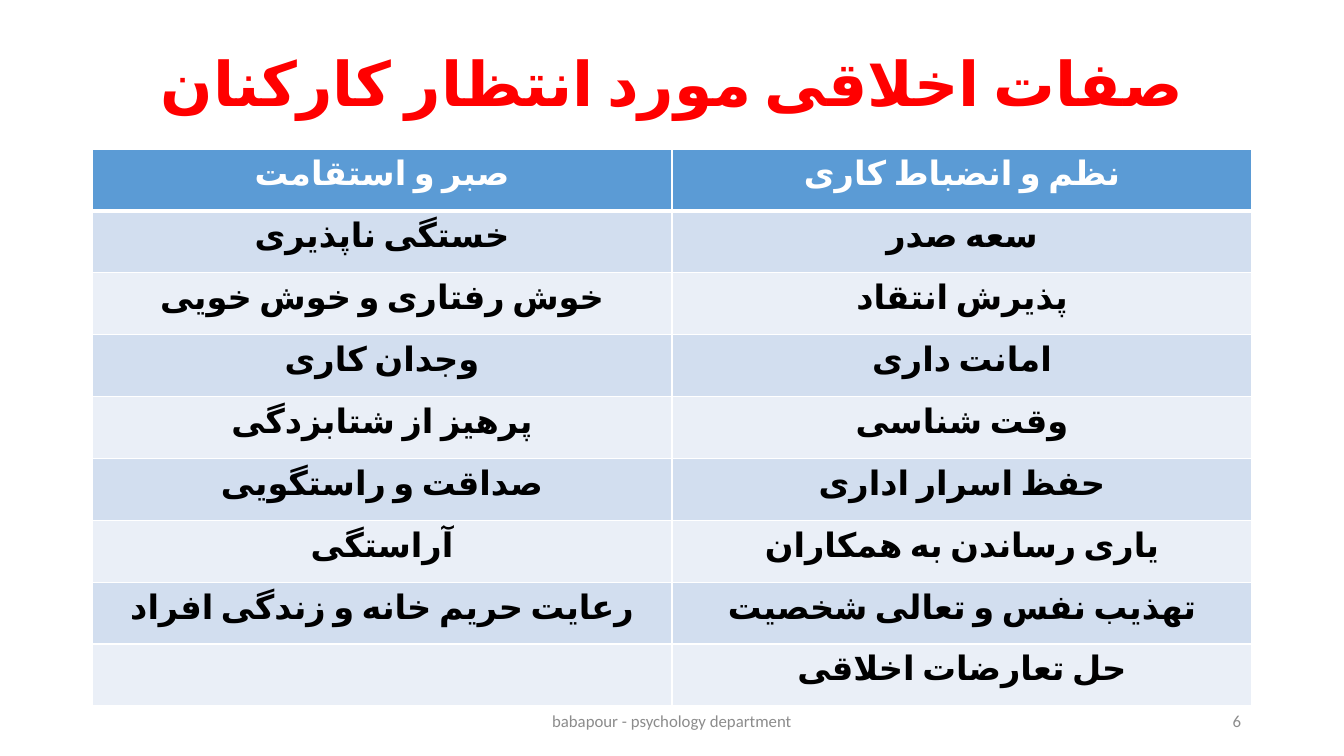
from lxml import etree
from pptx import Presentation
from pptx.dml.color import RGBColor
from pptx.enum.lang import MSO_LANGUAGE_ID
from pptx.enum.text import MSO_ANCHOR, PP_ALIGN
from pptx.oxml.ns import qn
from pptx.util import Pt

MIDDLE = MSO_ANCHOR.MIDDLE
CENTER, RIGHT = PP_ALIGN.CENTER, PP_ALIGN.RIGHT
FARSI, ENGLISH = MSO_LANGUAGE_ID.FARSI, MSO_LANGUAGE_ID.ENGLISH_US
SCALE = 914400 / 100.8  # EMU in one px

THEME = {
    "font": "Calibri",
    "head": "5B9BD5",
    "bands": ("D2DEEF", "EAEFF7"),
    "rule": "FFFFFF",
    "title": {"size": 44, "bold": True, "color": "FF0000", "lang": FARSI},
    "label": {"size": 24, "bold": True, "color": "FFFFFF", "lang": FARSI},
    "body": {"size": 24, "bold": True, "color": "000000", "lang": FARSI},
    "foot": {"size": 12, "bold": False, "color": "8C8C8C", "lang": ENGLISH},
}


def px(*nums):
    return [round(num * SCALE) for num in nums]


def write(frame, text, style, align=CENTER):
    para = frame.paragraphs[0]
    para.alignment = align
    run = para.add_run()
    run.text = text
    look = THEME[style]
    form = {
        "name": THEME["font"],
        "size": Pt(look["size"]),
        "bold": look["bold"],
        "language_id": look["lang"],
    }
    for key, val in form.items():
        setattr(run.font, key, val)
    run.font.color.rgb = RGBColor.from_string(look["color"])
    # Same typeface for the Persian script
    etree.SubElement(run._r.get_or_add_rPr(), qn("a:cs"), typeface=THEME["font"])
    return para


deck = Presentation()
deck.slide_width, deck.slide_height = px(1344, 756)
slide = deck.slides.add_slide(deck.slide_layouts[6])

# Title and footer
texts = [
    ("صفات اخلاقی مورد انتظار کارکنان", "title", CENTER, (93, 40, 1159, 93), 0.9),
    ("babapour - psychology department", "foot", CENTER, (445, 701, 454, 40), 1.0),
    ("6", "foot", RIGHT, (949, 701, 302, 40), 1.0),
]
for text, style, align, place, gap in texts:
    frame = slide.shapes.add_textbox(*px(*place)).text_frame
    frame.word_wrap = True
    frame.vertical_anchor = MIDDLE
    write(frame, text, style, align).line_spacing = gap

# Table of traits
traits = [
    ("صبر و استقامت", "نظم و انضباط کاری"),
    ("خستگی ناپذیری", "سعه صدر"),
    ("خوش رفتاری و خوش خویی", "پذیرش انتقاد"),
    ("وجدان کاری", "امانت داری"),
    ("پرهیز از شتابزدگی", "وقت شناسی"),
    ("صداقت و راستگویی", "حفظ اسرار اداری"),
    ("آراستگی", "یاری رساندن به همکاران"),
    ("رعایت حریم خانه و زندگی افراد", "تهذیب نفس و تعالی شخصیت"),
    ("", "حل تعارضات اخلاقی"),
]
place = px(92, 149, 1160, 557)
table = slide.shapes.add_table(len(traits), 2, *place).table
for r, row in enumerate(traits):
    fill = THEME["bands"][(r - 1) % 2] if r else THEME["head"]
    edges = {
        "a:lnL": 1,
        "a:lnR": 1,
        "a:lnT": 3 if r == 1 else 1,
        "a:lnB": 3 if r == 0 else 1,
    }
    for c, text in enumerate(row):
        cell = table.cell(r, c)
        # Borders come before the fill
        props = cell._tc.get_or_add_tcPr()
        for tag, width in edges.items():
            line = etree.SubElement(props, qn(tag), w=str(Pt(width)))
            solid = etree.SubElement(line, qn("a:solidFill"))
            etree.SubElement(solid, qn("a:srgbClr"), val=THEME["rule"])
        cell.fill.solid()
        cell.fill.fore_color.rgb = RGBColor.from_string(fill)
        if text:
            para = write(cell.text_frame, text, "body" if r else "label")
            para._p.get_or_add_pPr().set("rtl", "1")

deck.save("out.pptx")
